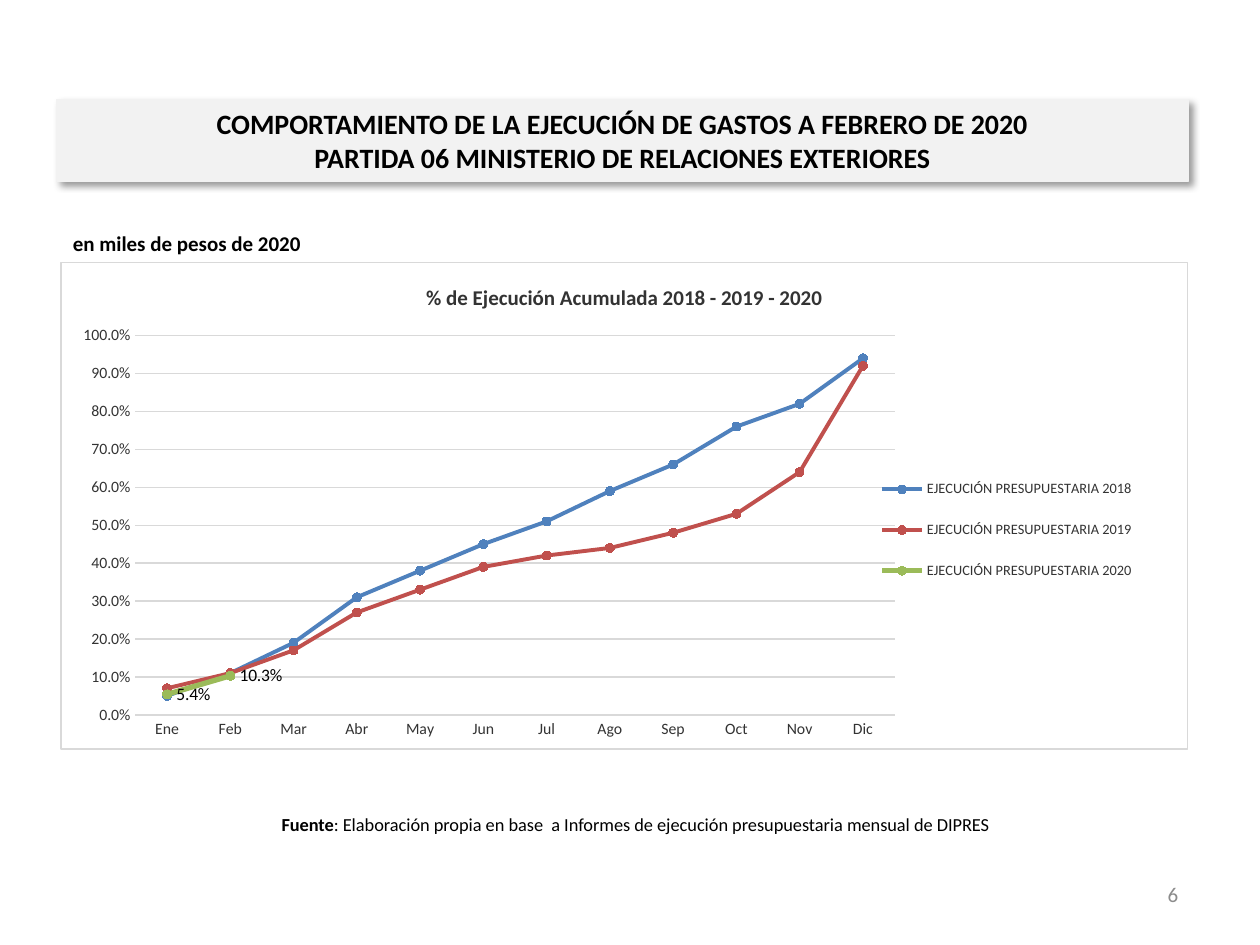
from dataclasses import dataclass
from lxml.etree import SubElement
from pptx import Presentation
from pptx.chart.data import CategoryChartData
from pptx.dml.color import RGBColor
from pptx.enum.chart import XL_CHART_TYPE as Kind, XL_LEGEND_POSITION as Side
from pptx.enum.chart import XL_LABEL_POSITION as Spot, XL_MARKER_STYLE as Mark
from pptx.enum.chart import XL_TICK_MARK as Tick
from pptx.enum.text import MSO_ANCHOR as Anchor, PP_ALIGN as Align
from pptx.oxml import parse_xml
from pptx.oxml.ns import nsdecls, qn
from pptx.util import Inches, Pt


@dataclass(frozen=True)
class Theme:
    face: str = "Calibri"
    ink: str = "000000"
    soft: str = "333333"
    mute: str = "8C8C8C"
    band: str = "F2F2F2"
    rule: str = "D9D9D9"
    head: float = 16
    body: float = 12
    note: float = 10.5
    label: float = 10
    axis: float = 9
    key: float = 8.2


T = Theme()
MONTHS = "Ene Feb Mar Abr May Jun Jul Ago Sep Oct Nov Dic".split()
SERIES = [
    ("2018", "4F81BD", 2.25,
     [0.05, 0.11, 0.19, 0.31, 0.38, 0.45, 0.51, 0.59, 0.66, 0.76, 0.82, 0.94]),
    ("2019", "C0504D", 2.25,
     [0.07, 0.11, 0.17, 0.27, 0.33, 0.39, 0.42, 0.44, 0.48, 0.53, 0.64, 0.92]),
    ("2020", "9BBB59", 3, [0.054, 0.103] + [None] * 10),
]


def style(font, size, color, bold=False):
    values = {"name": T.face, "size": Pt(size), "bold": bold}
    for key, value in values.items():
        setattr(font, key, value)
    font.color.rgb = RGBColor.from_string(color)


def paint(fill, color):
    fill.solid()
    fill.fore_color.rgb = RGBColor.from_string(color)


def stroke(line, color, width=0.75):
    paint(line.fill, color)
    line.width = Pt(width)


def add_title(slide, box, lines):
    title = slide.shapes.title
    for key, value in zip(("left", "top", "width", "height"), box):
        setattr(title, key, Inches(value))
    paint(title.fill, T.band)
    stroke(title.line, T.band)
    title._element.spPr.append(parse_xml(
        f'<a:effectLst {nsdecls("a")}>'
        '<a:outerShdw blurRad="50800" dist="38100" dir="2700000" algn="tl">'
        '<a:srgbClr val="000000"><a:alpha val="40000"/></a:srgbClr>'
        '</a:outerShdw></a:effectLst>'))
    frame = title.text_frame
    frame.vertical_anchor = Anchor.MIDDLE
    para = frame.paragraphs[0]
    para.alignment = Align.CENTER
    for i, text in enumerate(lines):
        if i:
            para.add_line_break()
        run = para.add_run()
        run.text = text
        style(run.font, T.head, T.ink, True)


def add_text(slide, box, runs, size, color=T.ink, align=Align.LEFT,
             anchor=Anchor.MIDDLE, wrap=True):
    frame = slide.shapes.add_textbox(*map(Inches, box)).text_frame
    frame.word_wrap = wrap
    frame.vertical_anchor = anchor
    para = frame.paragraphs[0]
    para.alignment = align
    for text, bold in runs:
        run = para.add_run()
        run.text = text
        style(run.font, size, color, bold)


def place(parent, box, inner=False):
    layout = parent.find(qn("c:layout"))
    if layout is None:
        layout = parent._insert_layout(parent._new_layout()) \
            if hasattr(parent, "_insert_layout") else SubElement(parent, qn("c:layout"))
    manual = SubElement(layout, qn("c:manualLayout"))
    parts = [("layoutTarget", "inner")] if inner else []
    parts += [("xMode", "edge"), ("yMode", "edge")] + list(zip("xywh", box))
    for tag, value in parts:
        SubElement(manual, qn(f"c:{tag}")).set("val", str(value))


def style_axes(chart):
    months, share = chart.category_axis, chart.value_axis
    for axis in (months, share):
        axis.major_tick_mark = axis.minor_tick_mark = Tick.NONE
        style(axis.tick_labels.font, T.axis, T.soft)
    stroke(months.format.line, T.rule)
    share.format.line.fill.background()
    stroke(share.major_gridlines.format.line, T.rule)
    values = {"minimum_scale": 0, "maximum_scale": 1, "major_unit": 0.1}
    for key, value in values.items():
        setattr(share, key, value)
    share.tick_labels.number_format = "0.0%"
    share.tick_labels.number_format_is_linked = False


def style_series(series, color, width):
    series.smooth = False
    stroke(series.format.line, color, width)
    series.marker.style = Mark.CIRCLE
    series.marker.size = 5
    paint(series.marker.format.fill, color)
    stroke(series.marker.format.line, color)


def add_labels(series):
    labels = series.data_labels
    values = {"show_value": True, "number_format": "0.0%",
              "number_format_is_linked": False, "position": Spot.RIGHT}
    for key, value in values.items():
        setattr(labels, key, value)
    style(labels.font, T.label, T.ink)


def add_legend(chart, box):
    chart.has_legend = True
    legend = chart.legend
    legend.position = Side.RIGHT
    legend.include_in_layout = False
    style(legend.font, T.key, T.soft)
    node = legend._element
    old = node.find(qn("c:layout"))
    if old is not None:
        node.remove(old)
    place(node, box)
    node.find(qn("c:legendPos")).addnext(node.find(qn("c:layout")))


def add_frame(chart):
    chart._chartSpace.find(qn("c:chart")).addnext(parse_xml(
        f'<c:spPr {nsdecls("c", "a")}>'
        '<a:solidFill><a:srgbClr val="FFFFFF"/></a:solidFill>'
        f'<a:ln w="9525"><a:solidFill><a:srgbClr val="{T.rule}"/>'
        '</a:solidFill></a:ln></c:spPr>'))


def add_lines(slide, box, title):
    data = CategoryChartData(number_format="0.0%")
    data.categories = MONTHS
    for year, color, width, values in SERIES:
        data.add_series(f"EJECUCIÓN PRESUPUESTARIA {year}", values)
    chart = slide.shapes.add_chart(
        Kind.LINE_MARKERS, *map(Inches, box), data).chart
    style(chart.font, T.label, T.ink)
    chart.has_title = True
    frame = chart.chart_title.text_frame
    frame.text = title
    style(frame.paragraphs[0].runs[0].font, T.body, T.soft, True)
    plot = chart.plots[0]
    plot.vary_by_categories = False
    for series, (year, color, width, values) in zip(plot.series, SERIES):
        style_series(series, color, width)
    add_labels(plot.series[-1])
    style_axes(chart)
    area = chart._chartSpace.find(qn("c:chart")).find(qn("c:plotArea"))
    if area.find(qn("c:layout")) is None:
        area.insert(0, parse_xml(f'<c:layout {nsdecls("c")}/>'))
    place(area, (0.066, 0.15, 0.674, 0.78), inner=True)
    add_legend(chart, (0.72, 0.4, 0.24, 0.3))
    add_frame(chart)


def main():
    deck = Presentation()
    deck.slide_width, deck.slide_height = Inches(10), Inches(7.5)
    slide = deck.slides.add_slide(deck.slide_layouts[5])
    add_title(slide, (0.45, 0.79, 8.98, 0.65),
              ("COMPORTAMIENTO DE LA EJECUCIÓN DE GASTOS A FEBRERO DE 2020",
               "PARTIDA 06 MINISTERIO DE RELACIONES EXTERIORES"))
    add_text(slide, (0.48, 1.78, 2.04, 0.3),
             [("en miles de pesos de 2020", True)], T.body,
             anchor=Anchor.TOP, wrap=False)
    add_lines(slide, (0.48, 2.08, 8.95, 3.87),
              "% de Ejecución Acumulada 2018 - 2019 - 2020")
    add_text(slide, (0.45, 6.34, 9.19, 0.4),
             [("Fuente", True),
              (": Elaboración propia en base  a Informes de ejecución "
               "presupuestaria mensual de DIPRES", False)],
             T.note, align=Align.CENTER)
    add_text(slide, (7.12, 6.9, 2.33, 0.4), [("6", False)], T.body,
             T.mute, Align.RIGHT)
    deck.save("out.pptx")


if __name__ == "__main__":
    main()
